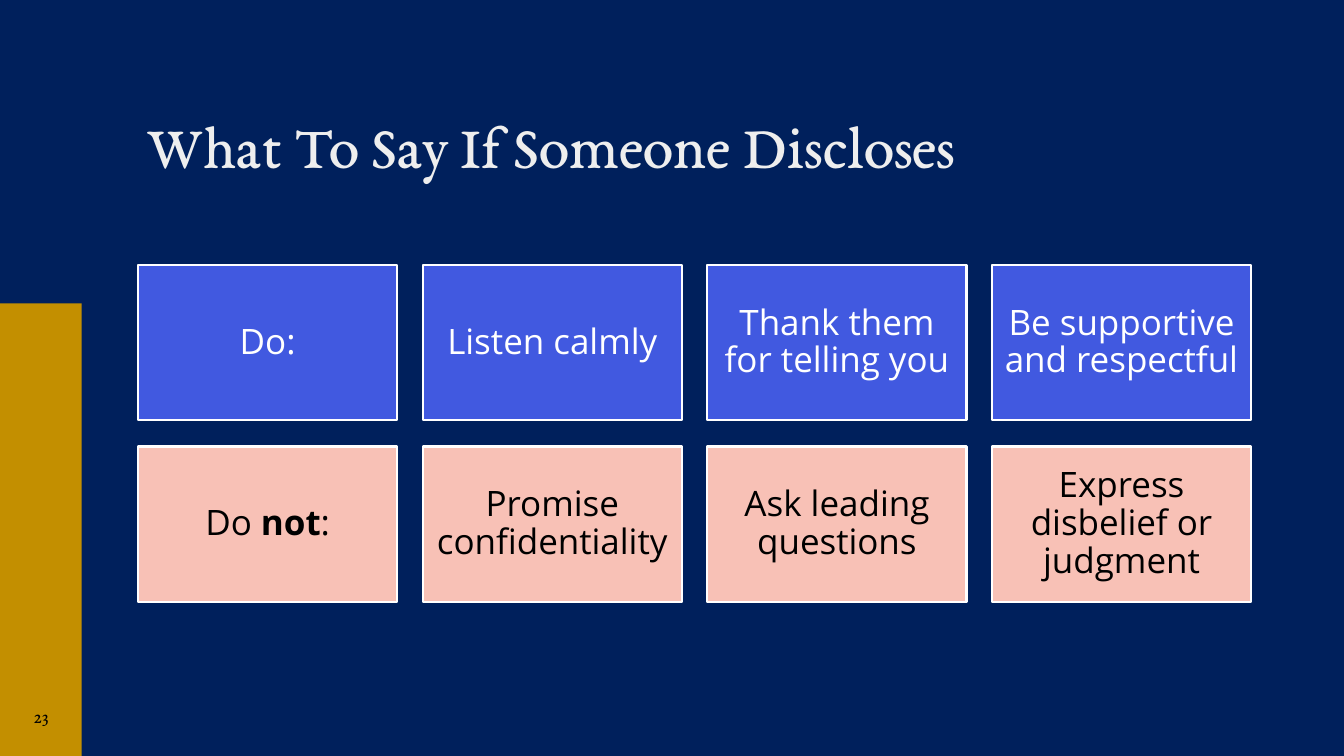
from pptx import Presentation
from pptx.dml.color import RGBColor
from pptx.enum.shapes import MSO_SHAPE
from pptx.enum.text import MSO_ANCHOR, MSO_AUTO_SIZE, PP_ALIGN
from pptx.util import Inches, Pt

NAVY = RGBColor(0x00, 0x20, 0x5C)
GOLD = RGBColor(0xC3, 0x8F, 0x00)
BLUE = RGBColor(0x41, 0x59, 0xE0)
PINK = RGBColor(0xF8, 0xC1, 0xB6)
PALE = RGBColor(0xEE, 0xEE, 0xEE)
WHITE = RGBColor(0xFF, 0xFF, 0xFF)
BLACK = RGBColor(0x00, 0x00, 0x00)

# Card grid, in inches
LEFT, TOP = 1.37, 2.63
CARD_WIDTH, CARD_HEIGHT = 2.57, 1.54
COLUMN_STEP, ROW_STEP = 2.823, 1.8

# Each row: fill, text colour, cards; the part between bars is bold
ROWS = [
    (BLUE, WHITE, ["Do:", "Listen calmly", "Thank them for telling you",
                   "Be supportive and respectful"]),
    (PINK, BLACK, ["Do |not|:", "Promise confidentiality", "Ask leading questions",
                   "Express disbelief or judgment"]),
]


def add_block(page, left, top, width, height, fill):
    block = page.shapes.add_shape(MSO_SHAPE.RECTANGLE, Inches(left), Inches(top),
                                  Inches(width), Inches(height))
    block.shadow.inherit = False
    block.fill.solid()
    block.fill.fore_color.rgb = fill
    block.line.fill.background()
    return block


def format_span(span, font_name, size, color):
    span.font.name = font_name
    span.font.size = Pt(size)
    span.font.color.rgb = color


deck = Presentation()
deck.slide_width, deck.slide_height = Inches(13.33), Inches(7.5)
page = deck.slides.add_slide(deck.slide_layouts[5])
page.background.fill.solid()
page.background.fill.fore_color.rgb = NAVY

# Gold side bar
add_block(page, 0, 3.01, 0.81, 4.49, GOLD)

# Title
title = page.shapes.title
title.left, title.top = Inches(1.36), Inches(0.4)
title.width, title.height = Inches(11.05), Inches(1.45)
title.text_frame.text = "What To Say If Someone Discloses"
title.text_frame.vertical_anchor = MSO_ANCHOR.BOTTOM
title.text_frame.auto_size = MSO_AUTO_SIZE.NONE
para = title.text_frame.paragraphs[0]
para.alignment = PP_ALIGN.LEFT
para.line_spacing = 0.9
format_span(para.runs[0], "EB Garamond", 44, PALE)

# Page number
number = page.shapes.add_textbox(Inches(0.15), Inches(6.9), Inches(0.51), Inches(0.4))
number.text_frame.text = "23"
number.text_frame.word_wrap = True
number.text_frame.vertical_anchor = MSO_ANCHOR.MIDDLE
para = number.text_frame.paragraphs[0]
para.alignment = PP_ALIGN.CENTER
para.space_after = Pt(6)
format_span(para.runs[0], "EB Garamond", 14, BLACK)

# Cards: what to do above, what not to do below
for row, (fill, color, cards) in enumerate(ROWS):
    for column, words in enumerate(cards):
        card = add_block(page, LEFT + column * COLUMN_STEP, TOP + row * ROW_STEP,
                         CARD_WIDTH, CARD_HEIGHT, fill)
        card.line.color.rgb = WHITE
        card.line.width = Pt(1.5)
        frame = card.text_frame
        frame.word_wrap = True
        frame.vertical_anchor = MSO_ANCHOR.MIDDLE
        frame.margin_left = frame.margin_right = Inches(0.1)
        frame.margin_top = frame.margin_bottom = Inches(0.1)
        para = frame.paragraphs[0]
        para.alignment = PP_ALIGN.CENTER
        para.line_spacing = 0.9
        for index, part in enumerate(words.split("|")):
            span = para.add_run()
            span.text = part
            span.font.bold = index % 2 == 1
            format_span(span, "Open Sans", 25, color)

deck.save("out.pptx")
